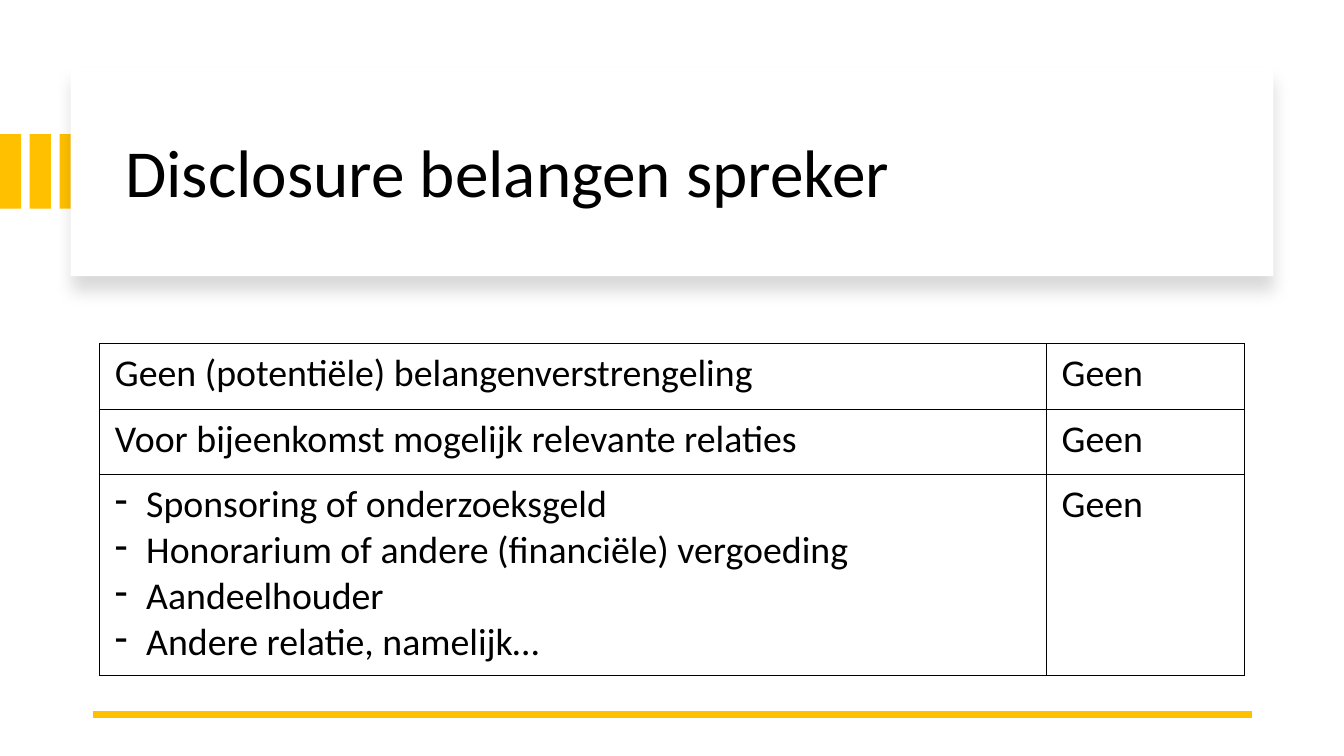
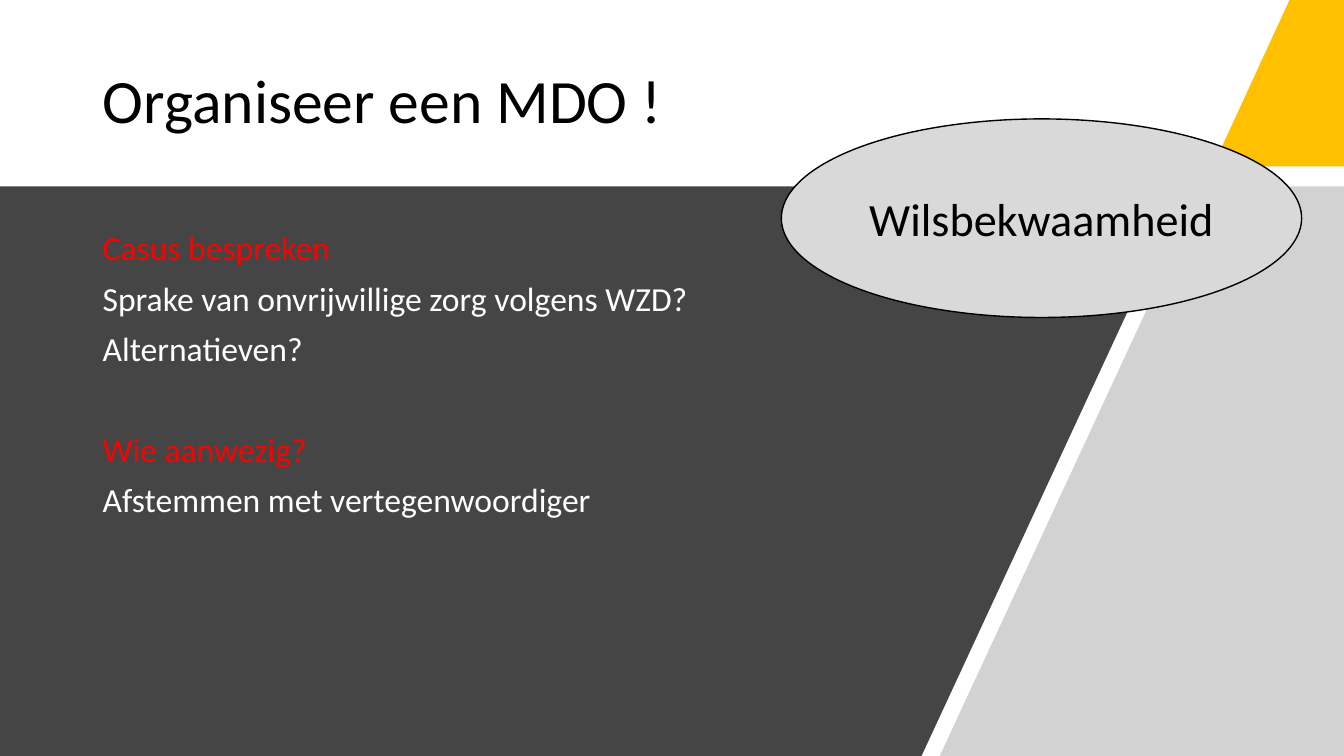
from dataclasses import dataclass

from lxml.etree import SubElement
from pptx import Presentation
from pptx.dml.color import RGBColor
from pptx.enum.shapes import MSO_CONNECTOR, MSO_SHAPE
from pptx.enum.text import MSO_ANCHOR, MSO_AUTO_SIZE, PP_ALIGN
from pptx.oxml.ns import qn
from pptx.util import Inches, Pt

DISCLOSURE_TITLE = "Disclosure belangen spreker"
DISCLOSURE_ROWS = [
    (["Geen (potentiële) belangenverstrengeling"], "Geen"),
    (["Voor bijeenkomst mogelijk relevante relaties"], "Geen"),
    (["Sponsoring of onderzoeksgeld",
      "Honorarium of andere (financiële) vergoeding",
      "Aandeelhouder",
      "Andere relatie, namelijk…"], "Geen"),
]
COLUMN_WIDTHS = (9.39, 1.96)
ROW_HEIGHTS = (0.65, 0.65, 1.99)

MEETING_TITLE = "Organiseer een MDO !"
MEETING_TOPICS = [
    ("Casus bespreken", ["Sprake van onvrijwillige zorg volgens WZD?", "Alternatieven?"]),
    ("Wie aanwezig?", ["Afstemmen met vertegenwoordiger"]),
]
MEETING_CALLOUT = "Wilsbekwaamheid"

WIDTH, HEIGHT = 13.33, 7.5
BAND_TOP = 1.85
GOLD_CORNER = [(12.79, 0), (WIDTH, 0), (WIDTH, 1.65), (12.03, 1.65)]
DARK_PANEL = [(0, BAND_TOP), (11.76, BAND_TOP), (9.14, HEIGHT), (0, HEIGHT)]
GREY_PANEL = [(11.94, BAND_TOP), (WIDTH, BAND_TOP), (WIDTH, HEIGHT), (9.32, HEIGHT)]


@dataclass(frozen=True)
class Theme:
    """Colours, font and type sizes of the deck."""
    font: str = "Calibri"
    gold: str = "FFC000"
    dark: str = "454545"
    grey: str = "A6A6A6"
    light: str = "D9D9D9"
    white: str = "FFFFFF"
    black: str = "000000"
    red: str = "FF0000"
    title_large: int = 48
    title: int = 44
    callout: int = 33
    table: int = 27
    body: int = 24


THEME = Theme()


def apply(target, **values):
    """Set every given attribute on the target."""
    for name, value in values.items():
        setattr(target, name, value)


def place(*lengths):
    """Turn lengths in inches into a list of Inches."""
    return [Inches(length) for length in lengths]


def write(para, text, size, color=THEME.black, **layout):
    """Put one styled span of text in a paragraph."""
    span = para.add_run()
    span.text = text
    apply(span.font, name=THEME.font, size=Pt(size))
    span.font.color.rgb = RGBColor.from_string(color)
    apply(para, **layout)


def paint(shape, fill, line=None):
    """Give a shape a flat fill, an optional outline and no shadow."""
    shape.shadow.inherit = False
    shape.fill.solid()
    shape.fill.fore_color.rgb = RGBColor.from_string(fill)
    if line:
        shape.line.color.rgb = RGBColor.from_string(line)
        shape.line.width = Pt(1)
    else:
        shape.line.fill.background()
    return shape


def add_block(slide, kind, at, fill, line=None):
    """Add a painted preset shape."""
    return paint(slide.shapes.add_shape(kind, *place(*at)), fill, line)


def add_outline(slide, points, fill):
    """Add a painted polygon through points in inches."""
    start, *others = [place(*point) for point in points]
    builder = slide.shapes.build_freeform(*start, scale=1.0)
    builder.add_line_segments(others, close=True)
    return paint(builder.convert_to_shape(), fill)


def add_alpha(color, percent):
    """Make an XML colour element partly transparent."""
    SubElement(color, qn("a:alpha"), val=str(percent * 1000))


def add_soft_shadow(shape):
    """Cast a soft shadow straight down."""
    effects = shape._element.spPr.find(qn("a:effectLst"))
    shadow = SubElement(effects, qn("a:outerShdw"), blurRad=str(Pt(11)),
                        dist=str(Pt(10)), dir="5400000", algn="t", rotWithShape="0")
    add_alpha(SubElement(shadow, qn("a:srgbClr"), val=THEME.black), 15)


def add_rule(slide, start, end):
    """Add the thick gold line."""
    rule = slide.shapes.add_connector(MSO_CONNECTOR.STRAIGHT, *place(*start, *end))
    rule.line.color.rgb = RGBColor.from_string(THEME.gold)
    rule.line.width = Pt(4.5)
    SubElement(rule._element.spPr, qn("a:effectLst"))


def set_title(slide, text, at, size):
    """Place the title placeholder in front of the shapes so far."""
    title = slide.shapes.title
    apply(title, **dict(zip(("left", "top", "width", "height"), place(*at))))
    frame = title.text_frame
    apply(frame, word_wrap=True, auto_size=MSO_AUTO_SIZE.NONE,
          vertical_anchor=MSO_ANCHOR.MIDDLE)
    write(frame.paragraphs[0], text, size, alignment=PP_ALIGN.LEFT, line_spacing=0.9)
    slide.shapes._spTree.append(title._element)


def add_dash(para):
    """Hang a paragraph on a dash."""
    properties = para._p.get_or_add_pPr()
    properties.set("marL", str(Inches(0.31)))
    properties.set("indent", str(-Inches(0.31)))
    SubElement(properties, qn("a:buChar"), char="-")


def add_borders(cell):
    """Draw a thin line on all four sides of a cell."""
    properties = cell._tc.get_or_add_tcPr()
    for position, side in enumerate(("lnL", "lnR", "lnT", "lnB")):
        line = SubElement(properties, qn(f"a:{side}"), w=str(Pt(1)))
        fill = SubElement(line, qn("a:solidFill"))
        SubElement(fill, qn("a:srgbClr"), val=THEME.black)
        properties.insert(position, line)


def fill_cell(cell, lines):
    """Write lines in a bordered cell, with dashes when there are several."""
    apply(cell, **dict(zip(("margin_left", "margin_top", "margin_right", "margin_bottom"),
                           place(0.15, 0.07, 0.15, 0.07))))
    cell.fill.background()
    add_borders(cell)
    frame = cell.text_frame
    for number, text in enumerate(lines):
        para = frame.add_paragraph() if number else frame.paragraphs[0]
        write(para, text, THEME.table)
        if len(lines) > 1:
            add_dash(para)


def add_disclosure_table(slide):
    """Add the table of interests."""
    size = sum(COLUMN_WIDTHS), sum(ROW_HEIGHTS)
    table = slide.shapes.add_table(len(ROW_HEIGHTS), len(COLUMN_WIDTHS),
                                   *place(0.99, 3.41, *size)).table
    apply(table, first_row=False, horz_banding=False)
    for column, width in zip(table.columns, COLUMN_WIDTHS):
        column.width = Inches(width)
    for row, height, (lines, answer) in zip(table.rows, ROW_HEIGHTS, DISCLOSURE_ROWS):
        row.height = Inches(height)
        fill_cell(row.cells[0], lines)
        fill_cell(row.cells[1], [answer])


def add_topics(slide):
    """Add the red headings with their white lines."""
    frame = slide.shapes.add_textbox(*place(0.92, 2.25, 8, 4.51)).text_frame
    frame.word_wrap = True
    para = frame.paragraphs[0]
    for number, (heading, lines) in enumerate(MEETING_TOPICS):
        if number:
            para = frame.add_paragraph()
        write(para, heading, THEME.body, THEME.red, line_spacing=0.9,
              space_before=Pt(46 if number else 10))
        for text in lines:
            write(frame.add_paragraph(), text, THEME.body, THEME.white,
                  line_spacing=0.9, space_before=Pt(10))


def add_callout(slide):
    """Add the ellipse with its centred word."""
    callout = add_block(slide, MSO_SHAPE.OVAL, (7.75, 1.18, 5.16, 1.97),
                        THEME.light, THEME.black)
    frame = callout.text_frame
    apply(frame, word_wrap=True, vertical_anchor=MSO_ANCHOR.MIDDLE)
    write(frame.paragraphs[0], MEETING_CALLOUT, THEME.callout, alignment=PP_ALIGN.CENTER)


def build_disclosure(slide):
    """Build the slide with the speaker's interests."""
    for bar in range(3):
        add_block(slide, MSO_SHAPE.RECTANGLE, (bar * 0.295, 1.33, 0.21, 0.74), THEME.gold)
    card = add_block(slide, MSO_SHAPE.RECTANGLE, (0.7, 0.67, 11.93, 2.07), THEME.white)
    add_soft_shadow(card)
    set_title(slide, DISCLOSURE_TITLE, (1.14, 0.89, 11.13, 1.7), THEME.title_large)
    add_rule(slide, (12.42, 7.09), (0.92, 7.09))
    add_disclosure_table(slide)


def build_meeting(slide):
    """Build the slide about the meeting."""
    add_block(slide, MSO_SHAPE.RECTANGLE, (0, 0, WIDTH, HEIGHT), THEME.white)
    set_title(slide, MEETING_TITLE, (0.92, 0.4, 10.73, 1.25), THEME.title)
    add_outline(slide, GOLD_CORNER, THEME.gold)
    add_outline(slide, DARK_PANEL, THEME.dark)
    add_topics(slide)
    panel = add_outline(slide, GREY_PANEL, THEME.grey)
    add_alpha(panel._element.spPr.find(qn("a:solidFill"))[0], 50)
    add_callout(slide)


def main():
    """Build and save the deck."""
    deck = Presentation()
    apply(deck, slide_width=Inches(WIDTH), slide_height=Inches(HEIGHT))
    for build, color in ((build_disclosure, THEME.white), (build_meeting, THEME.dark)):
        slide = deck.slides.add_slide(deck.slide_layouts[5])
        slide.background.fill.solid()
        slide.background.fill.fore_color.rgb = RGBColor.from_string(color)
        build(slide)
    deck.save("out.pptx")


main()
